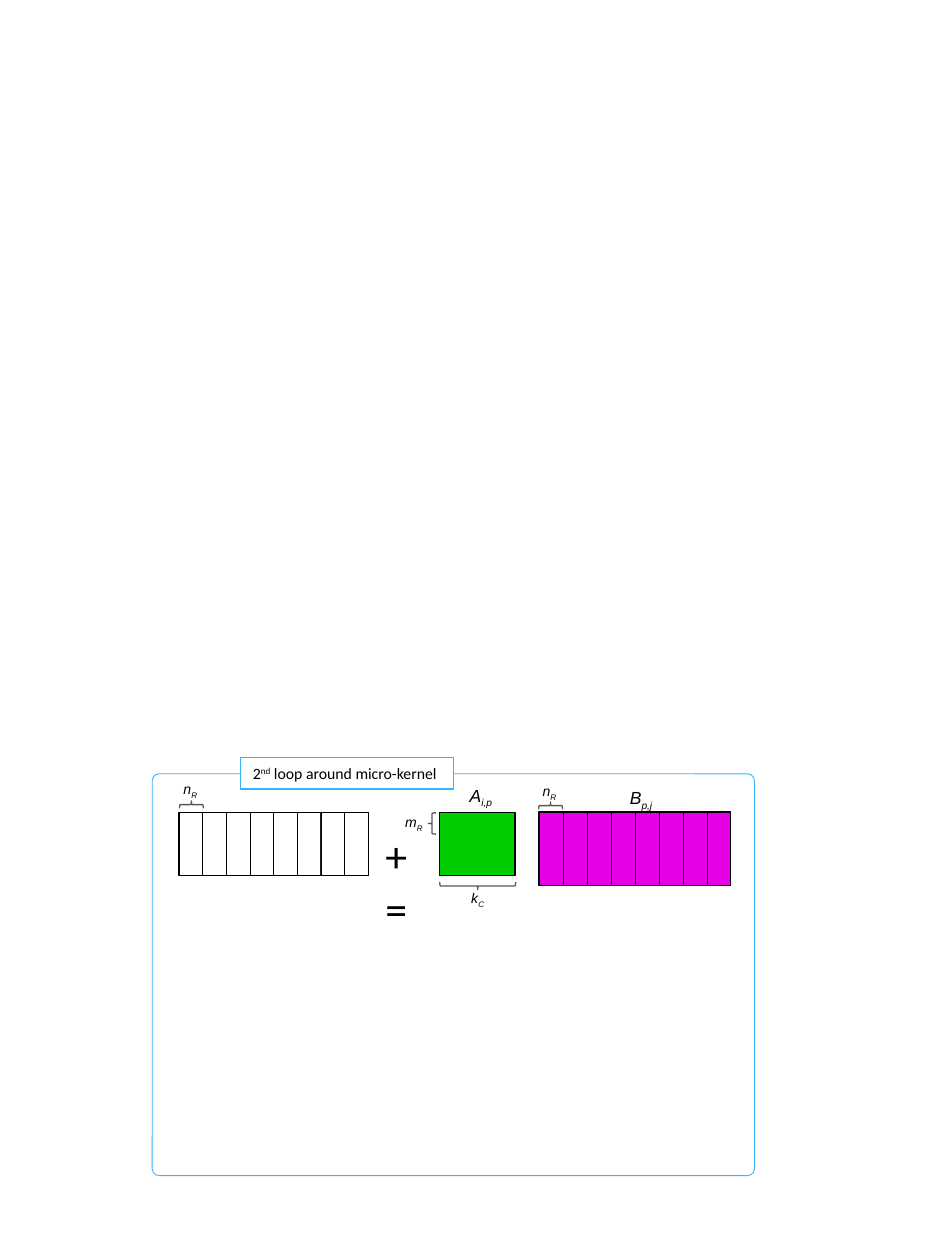
from pptx import Presentation
from pptx.dml.color import RGBColor
from pptx.enum.shapes import MSO_SHAPE
from pptx.enum.text import MSO_ANCHOR, MSO_AUTO_SIZE, PP_ALIGN
from pptx.util import Cm, Pt

COLORS = {"black": "000000", "white": "FFFFFF", "green": "00CE00",
          "magenta": "E500E5", "gray": "595959", "blue": "38B4FF"}

# Lengths in cm: left, top, width, height
PANEL = (3.07, 15.6, 12.14, 8.1)
TITLE_BOX = (4.85, 15.27, 4.29, 0.64)
TITLE = [("2", 0), ("nd", 30), (" loop around micro-kernel", 0)]
OPERATOR_BOX = (7.52, 16.59, 1.14, 1.02)

# box, fill, number of column panels
MATRICES = [
    ((3.61, 16.38, 3.81, 1.27), "white", 8),
    ((8.86, 16.38, 1.53, 1.27), "green", 1),
    ((10.87, 16.37, 3.86, 1.48), "magenta", 8),
]

# centre x, centre y, length, rotation
BRACES = [
    (3.86, 16.22, 0.48, 270),
    (8.71, 16.6, 0.43, 180),
    (9.63, 17.86, 1.53, 90),
    (11.1, 16.24, 0.48, 270),
]
BRACE_DEPTH = 0.15

# symbol, subscript, size, box
LABELS = [
    ("n", "R", 8, (3.45, 15.62, 0.81, 0.61)),
    ("m", "R", 8, (7.92, 16.28, 0.97, 0.61)),
    ("k", "C", 8, (9.25, 17.81, 0.84, 0.61)),
    ("A", "i,p", 10, (9.22, 15.7, 1.07, 0.69)),
    ("n", "R", 8, (10.69, 15.65, 0.81, 0.61)),
    ("B", "p,j", 10, (12.45, 15.75, 1.22, 0.69)),
]


def rgb(name):
    return RGBColor.from_string(COLORS[name])


def add_shape(s, kind, box, line, width, fill=None):
    sp = s.shapes.add_shape(kind, *map(Cm, box))
    sp.shadow.inherit = False
    if fill:
        sp.fill.solid()
        sp.fill.fore_color.rgb = rgb(fill)
    else:
        sp.fill.background()
    sp.line.color.rgb = rgb(line)
    sp.line.width = Pt(width)
    return sp


def set_text(sp, runs, size, font, italic=False):
    """Write (text, baseline percent) runs as one left-aligned paragraph."""
    tf = sp.text_frame
    tf.word_wrap = True
    tf.auto_size = MSO_AUTO_SIZE.SHAPE_TO_FIT_TEXT
    p = tf.paragraphs[0]
    p.alignment = PP_ALIGN.LEFT
    p.font.size, p.font.name, p.font.italic = Pt(size), font, italic
    p.font.color.rgb = rgb("black")
    for text, baseline in runs:
        r = p.add_run()
        r.text = text
        if baseline:
            r._r.get_or_add_rPr().set("baseline", str(baseline * 1000))


def add_text(s, box, *args):
    set_text(s.shapes.add_textbox(*map(Cm, box)), *args)


def add_matrix(s, box, fill, columns):
    add_shape(s, MSO_SHAPE.RECTANGLE, box, "black", 1, fill)
    if columns > 1:
        left, top, width, height = box
        step = width / columns
        for i in range(columns):
            add_shape(s, MSO_SHAPE.RECTANGLE, (left + i * step, top, step, height),
                      "black", 0.25, fill)


def add_brace(s, cx, cy, length, rotation):
    box = (cx - BRACE_DEPTH / 2, cy - length / 2, BRACE_DEPTH, length)
    add_shape(s, MSO_SHAPE.RIGHT_BRACE, box, "gray", 0.75).rotation = rotation


def main():
    prs = Presentation()
    prs.slide_width, prs.slide_height = Cm(19.05), Cm(25.4)
    s = prs.slides.add_slide(prs.slide_layouts[6])

    panel = add_shape(s, MSO_SHAPE.ROUNDED_RECTANGLE, PANEL, "blue", 0.5)
    panel.adjustments[0] = 0.017
    title = add_shape(s, MSO_SHAPE.RECTANGLE, TITLE_BOX, "blue", 0.75, "white")
    title.text_frame.vertical_anchor = MSO_ANCHOR.MIDDLE
    set_text(title, TITLE, 9, "Calibri")

    for matrix in MATRICES:
        add_matrix(s, *matrix)
    for brace in BRACES:
        add_brace(s, *brace)
    for symbol, subscript, size, box in LABELS:
        add_text(s, box, [(symbol, 0), (subscript, -25)], size, "Arial", True)
    add_text(s, OPERATOR_BOX, [("+=", 0)], 25, "Calibri")

    prs.save("out.pptx")


if __name__ == "__main__":
    main()
